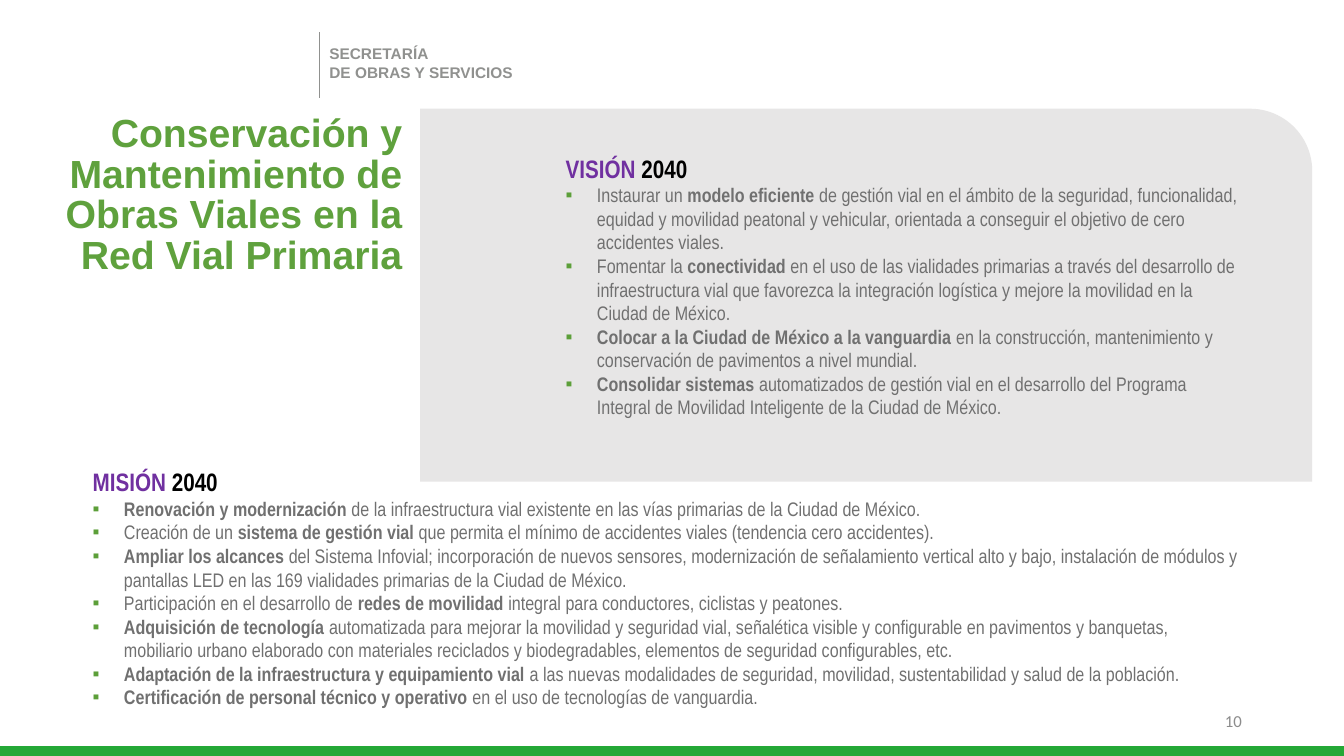
from pptx import Presentation
from pptx.dml.color import RGBColor
from pptx.enum.shapes import MSO_CONNECTOR, MSO_SHAPE
from pptx.enum.text import MSO_ANCHOR, MSO_AUTO_SIZE, PP_ALIGN
from pptx.oxml.ns import qn
from pptx.util import Cm, Pt
from lxml.etree import SubElement

SLIDE_WIDTH, SLIDE_HEIGHT = 33.87, 19.05
GREEN, PURPLE, BLACK = "5C9F39", "7030A0", "000000"
BODY_GRAY, HEADER_GRAY = "707070", "90918F"

# Text between ** marks is bold
VISION = [
    "Instaurar un **modelo eficiente **de gestión vial en el ámbito de la seguridad, funcionalidad, "
    "equidad y movilidad peatonal y vehicular, orientada a conseguir el objetivo de cero accidentes viales.",
    "Fomentar la **conectividad** en el uso de las vialidades primarias a través del desarrollo de "
    "infraestructura vial que favorezca la integración logística y mejore la movilidad en la Ciudad de México.",
    "**Colocar a la Ciudad de México a la vanguardia **en la construcción, mantenimiento y "
    "conservación de pavimentos a nivel mundial.",
    "**Consolidar sistemas** automatizados de gestión vial en el desarrollo del Programa "
    "Integral de Movilidad Inteligente de la Ciudad de México.",
]
MISSION = [
    "**Renovación y modernización **de la infraestructura vial existente en las vías primarias "
    "de la Ciudad de México.",
    "Creación de un **sistema de gestión vial **que permita el mínimo de accidentes viales "
    "(tendencia cero accidentes).",
    "**Ampliar los alcances **del Sistema Infovial; incorporación de nuevos sensores, modernización de "
    "señalamiento vertical alto y bajo, instalación de módulos y pantallas LED en las 169 vialidades "
    "primarias de la Ciudad de México.",
    "Participación en el desarrollo de **redes de movilidad **integral para conductores, ciclistas y peatones.",
    "**Adquisición de tecnología **automatizada para mejorar la movilidad y seguridad vial, señalética "
    "visible y configurable en pavimentos y banquetas, mobiliario urbano elaborado con materiales "
    "reciclados y biodegradables, elementos de seguridad configurables, etc.",
    "**Adaptación de la infraestructura y equipamiento vial **a las nuevas modalidades de seguridad, "
    "movilidad, sustentabilidad y salud de la población.",
    "**Certificación de personal técnico y operativo **en el uso de tecnologías de vanguardia.",
]


def color(hex_value):
    return RGBColor.from_string(hex_value)


def style(run, size, font, hex_value, bold=False):
    run.font.size, run.font.name, run.font.bold = Pt(size), font, bold
    run.font.color.rgb = color(hex_value)


def place(placeholder, box):
    placeholder.left, placeholder.top, placeholder.width, placeholder.height = map(Cm, box)
    # Bring the text in front of the shapes drawn so far
    element = placeholder.element
    element.getparent().append(element)
    frame = placeholder.text_frame
    frame.word_wrap, frame.auto_size = True, MSO_AUTO_SIZE.NONE
    frame.vertical_anchor = MSO_ANCHOR.TOP
    return frame


def add_block(slide, kind, box, fill):
    block = slide.shapes.add_shape(kind, *map(Cm, box))
    block.shadow.inherit = False
    block.fill.solid()
    block.fill.fore_color.rgb = color(fill)
    block.line.fill.background()


def add_header(slide, box):
    left, top, width, height = box
    # Vertical rule
    rule = slide.shapes.add_connector(
        MSO_CONNECTOR.STRAIGHT, Cm(left), Cm(top), Cm(left), Cm(top + height))
    rule.line.color.rgb, rule.line.width = color(HEADER_GRAY), Pt(1)
    SubElement(rule.element.spPr, qn("a:effectLst"))
    # Department name
    department = slide.shapes.add_textbox(Cm(left), Cm(top + 0.18), Cm(width), Cm(height)).text_frame
    department.word_wrap = True
    department.text = "SECRETARÍA\nDE OBRAS Y SERVICIOS"
    for paragraph in department.paragraphs:
        style(paragraph.runs[0], 11, "Arial", HEADER_GRAY, True)


def add_title(slide, box):
    frame = place(slide.shapes.title, box)
    frame.text = "Conservación y Mantenimiento de Obras Viales en la Red Vial Primaria"
    paragraph = frame.paragraphs[0]
    paragraph.alignment, paragraph.line_spacing = PP_ALIGN.RIGHT, Pt(29)
    style(paragraph.runs[0], 28, "Arial", "5FA13D", True)


def set_bullet(paragraph, indent, hanging, bullet=None):
    properties = paragraph._p.get_or_add_pPr()
    properties.set("marL", str(Cm(indent)))
    properties.set("indent", str(-Cm(hanging)))
    if bullet:
        bullet_color = SubElement(properties, qn("a:buClr"))
        SubElement(bullet_color, qn("a:srgbClr"), val=GREEN)
        SubElement(properties, qn("a:buFont"), typeface="Arial")
        SubElement(properties, qn("a:buChar"), char=bullet)
    else:
        SubElement(properties, qn("a:buNone"))
    paragraph.space_before = Pt(0)


def add_section(slide, index, box, heading, items):
    frame = place(slide.placeholders[index], box)
    # Heading with the year
    first = frame.paragraphs[0]
    set_bullet(first, 1.27, 0)
    for text, hex_value in ((heading + " ", PURPLE), ("2040", BLACK)):
        run = first.add_run()
        run.text = text
        style(run, 18, "Arial Narrow", hex_value, True)
    # Bulleted statements
    for item in items:
        paragraph = frame.add_paragraph()
        set_bullet(paragraph, 2.06, 0.79, "▪")
        for part, text in enumerate(item.split("**")):
            if text:
                run = paragraph.add_run()
                run.text = text
                style(run, 14, "Arial Narrow", BODY_GRAY, part % 2 == 1)


def add_page_number(slide, box):
    frame = slide.shapes.add_textbox(*map(Cm, box)).text_frame
    frame.word_wrap, frame.vertical_anchor = True, MSO_ANCHOR.MIDDLE
    frame.text = "10"
    frame.paragraphs[0].alignment = PP_ALIGN.RIGHT
    style(frame.paragraphs[0].runs[0], 12, "Calibri", "8C8C8C")


def main():
    presentation = Presentation()
    presentation.slide_width, presentation.slide_height = Cm(SLIDE_WIDTH), Cm(SLIDE_HEIGHT)
    slide = presentation.slides.add_slide(presentation.slide_layouts[3])
    add_header(slide, (8.05, 0.81, 5.41, 1.65))
    # Vision panel and footer bar
    add_block(slide, MSO_SHAPE.ROUND_1_RECTANGLE, (10.59, 2.74, 22.48, 9.4), "E7E6E6")
    add_block(slide, MSO_SHAPE.RECTANGLE, (0, SLIDE_HEIGHT - 0.25, SLIDE_WIDTH, 0.25), "24A836")
    add_page_number(slide, (23.93, 17.65, 7.62, 1.02))
    add_title(slide, (0, 2.77, 10.39, 4.39))
    add_section(slide, 1, (12.73, 3.73, 18.82, 7.77), "VISIÓN", VISION)
    add_section(slide, 2, (0.81, 11.63, 30.71, 6.68), "MISIÓN", MISSION)
    presentation.save("out.pptx")


if __name__ == "__main__":
    main()
